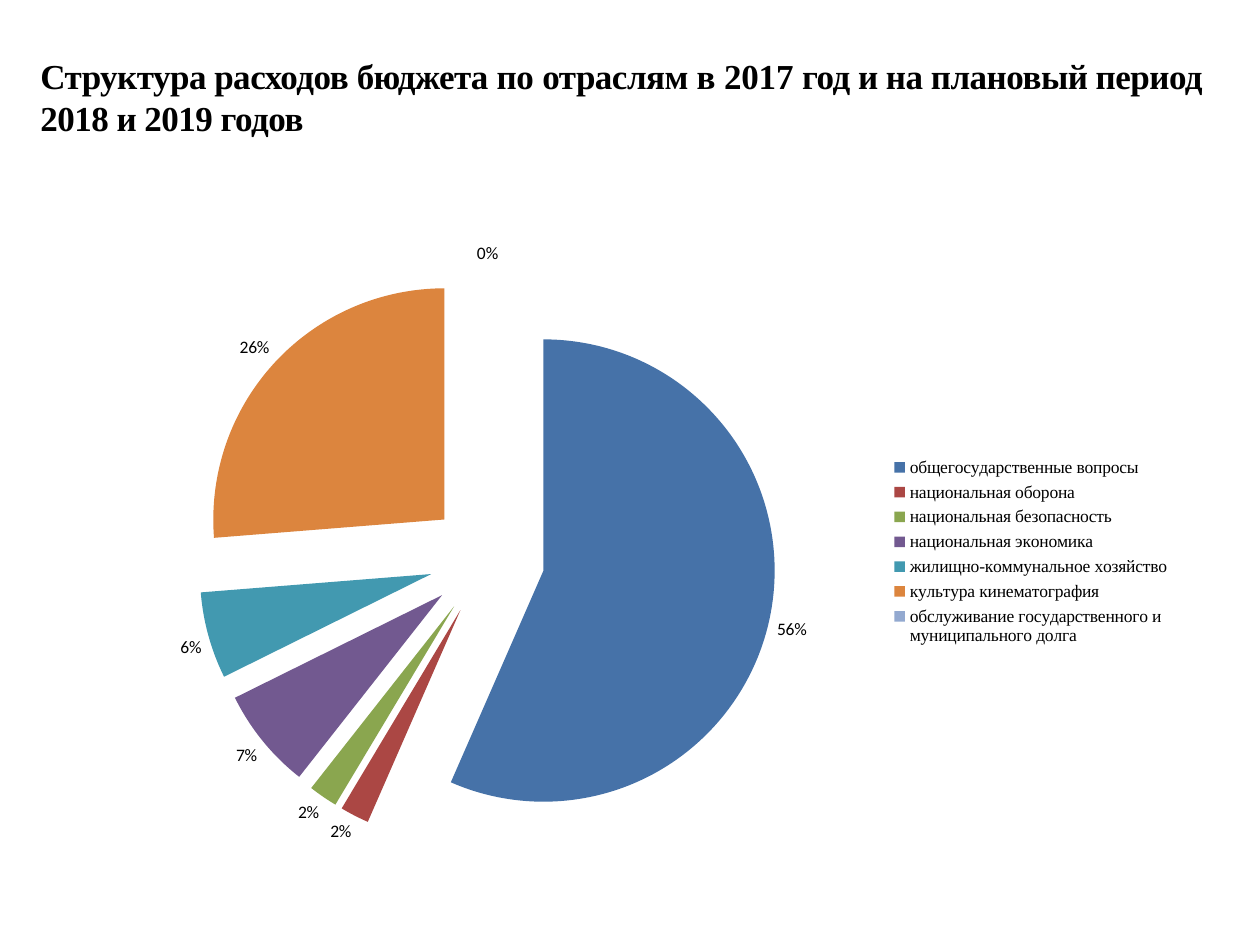
from lxml.etree import SubElement
from pptx import Presentation
from pptx.chart.data import CategoryChartData
from pptx.dml.color import RGBColor
from pptx.enum.chart import XL_CHART_TYPE, XL_LABEL_POSITION, XL_LEGEND_POSITION
from pptx.enum.text import MSO_ANCHOR, PP_ALIGN
from pptx.oxml.ns import qn
from pptx.util import Inches, Pt

BLACK = RGBColor(0x00, 0x00, 0x00)
SERIF = "Times New Roman"
SANS = "Calibri"

# Title runs with their letter spacing in points
TITLE_RUNS = [
    ("Структура расходов ", -0.3),
    ("бюджета ", -0.4),
    ("по ", -0.2),
    ("отраслям ", -0.3),
    ("в ", -0.2),
    ("2017 ", -0.1),
    ("год и на плановый период 2018 и 2019 годов", -0.3),
]

# Budget branch, share in percent, slice colour
BRANCHES = [
    ("общегосударственные вопросы", 56, RGBColor(0x46, 0x72, 0xA8)),
    ("национальная оборона", 2, RGBColor(0xAB, 0x47, 0x44)),
    ("национальная безопасность", 2, RGBColor(0x8A, 0xA6, 0x4F)),
    ("национальная экономика", 7, RGBColor(0x72, 0x59, 0x90)),
    ("жилищно-коммунальное хозяйство", 6, RGBColor(0x42, 0x99, 0xB0)),
    ("культура кинематография", 26, RGBColor(0xDC, 0x85, 0x3E)),
    ("обслуживание государственного и муниципального долга", 0,
     RGBColor(0x93, 0xA9, 0xD0)),
]
EXPLOSION = 25

# Chart frame, pie and legend boxes in inches: left, top, width, height
CHART_BOX = (0.78, 1.8, 8.59, 5.16)
PIE_BOX = (2.03, 2.6, 3.67, 3.67)
LEGEND_BOX = (7.03, 3.59, 2.3, 1.58)


def set_font(font, name, size, bold=False):
    font.name = name
    font.size = Pt(size)
    font.bold = bold
    font.color.rgb = BLACK


def clear_margins(frame):
    frame.margin_left = frame.margin_right = 0
    frame.margin_top = frame.margin_bottom = 0


def fill_title(title):
    title.left, title.top = Inches(0.32), Inches(0.43)
    title.width, title.height = Inches(9.45), Inches(0.67)
    frame = title.text_frame
    clear_margins(frame)
    frame.vertical_anchor = MSO_ANCHOR.TOP
    frame.word_wrap = True
    paragraph = frame.paragraphs[0]
    paragraph.alignment = PP_ALIGN.LEFT
    for text, spacing in TITLE_RUNS:
        run = paragraph.add_run()
        run.text = text
        set_font(run.font, SERIF, 20, bold=True)
        run.font._element.set("spc", str(round(spacing * 100)))


def set_layout(parent, box, modes):
    """Place a chart part by its box, as fractions of the chart frame."""
    layout = parent.find(qn("c:layout"))
    if layout is None:
        layout = SubElement(parent, qn("c:layout"))
        first = parent.find(qn("c:legendPos"))
        if first is not None:
            first.addnext(layout)
        else:
            parent.insert(0, layout)
    left, top, width, height = CHART_BOX
    settings = {
        **modes,
        "x": (box[0] - left) / width,
        "y": (box[1] - top) / height,
        "w": box[2] / width,
        "h": box[3] / height,
    }
    manual = SubElement(layout, qn("c:manualLayout"))
    for tag, value in settings.items():
        SubElement(manual, qn(f"c:{tag}")).set("val", str(value))


def add_pie(slide):
    data = CategoryChartData()
    data.categories = [name for name, _, _ in BRANCHES]
    data.add_series("Series 1", [share for _, share, _ in BRANCHES])
    frame = [Inches(length) for length in CHART_BOX]
    chart = slide.shapes.add_chart(XL_CHART_TYPE.PIE, *frame, data).chart
    chart.has_title = False
    set_font(chart.font, SANS, 10)

    # Legend
    chart.has_legend = True
    chart.legend.position = XL_LEGEND_POSITION.RIGHT
    chart.legend.include_in_layout = False
    set_font(chart.legend.font, SERIF, 10)

    # Places of the pie and the legend
    edges = {"xMode": "edge", "yMode": "edge"}
    plot_area = chart._chartSpace.chart.plotArea
    set_layout(plot_area, PIE_BOX, {"layoutTarget": "inner", **edges})
    set_layout(chart.legend._element, LEGEND_BOX, edges)

    # Exploded slices
    plot = chart.plots[0]
    plot.vary_by_categories = True
    series = plot.series[0]
    for index, (_, _, colour) in enumerate(BRANCHES):
        fill = series.points[index].format.fill
        fill.solid()
        fill.fore_color.rgb = colour
    for point in series._element.findall(qn("c:dPt")):
        explosion = SubElement(point, qn("c:explosion"))
        explosion.set("val", str(EXPLOSION))
        point.find(qn("c:spPr")).addprevious(explosion)

    # Labels: the shares are already rounded percentages
    plot.has_data_labels = True
    labels = plot.data_labels
    labels.show_value = True
    labels.show_percentage = False
    labels.number_format = '0"%";;'
    labels.number_format_is_linked = False
    labels.position = XL_LABEL_POSITION.OUTSIDE_END
    set_font(labels.font, SANS, 10)


def add_zero_label(slide):
    """Label the empty slice, which the chart leaves unlabelled."""
    box = slide.shapes.add_textbox(Inches(3.67), Inches(1.92), Inches(0.4), Inches(0.17))
    frame = box.text_frame
    clear_margins(frame)
    frame.word_wrap = True
    frame.vertical_anchor = MSO_ANCHOR.MIDDLE
    paragraph = frame.paragraphs[0]
    paragraph.alignment = PP_ALIGN.CENTER
    run = paragraph.add_run()
    run.text = "0%"
    set_font(run.font, SANS, 10)


def main():
    presentation = Presentation()
    presentation.slide_width = Inches(10)
    presentation.slide_height = Inches(7.5)
    slide = presentation.slides.add_slide(presentation.slide_layouts[0])
    subtitle = slide.placeholders[1].element
    subtitle.getparent().remove(subtitle)
    fill_title(slide.shapes.title)
    add_pie(slide)
    add_zero_label(slide)
    presentation.save("out.pptx")


if __name__ == "__main__":
    main()
